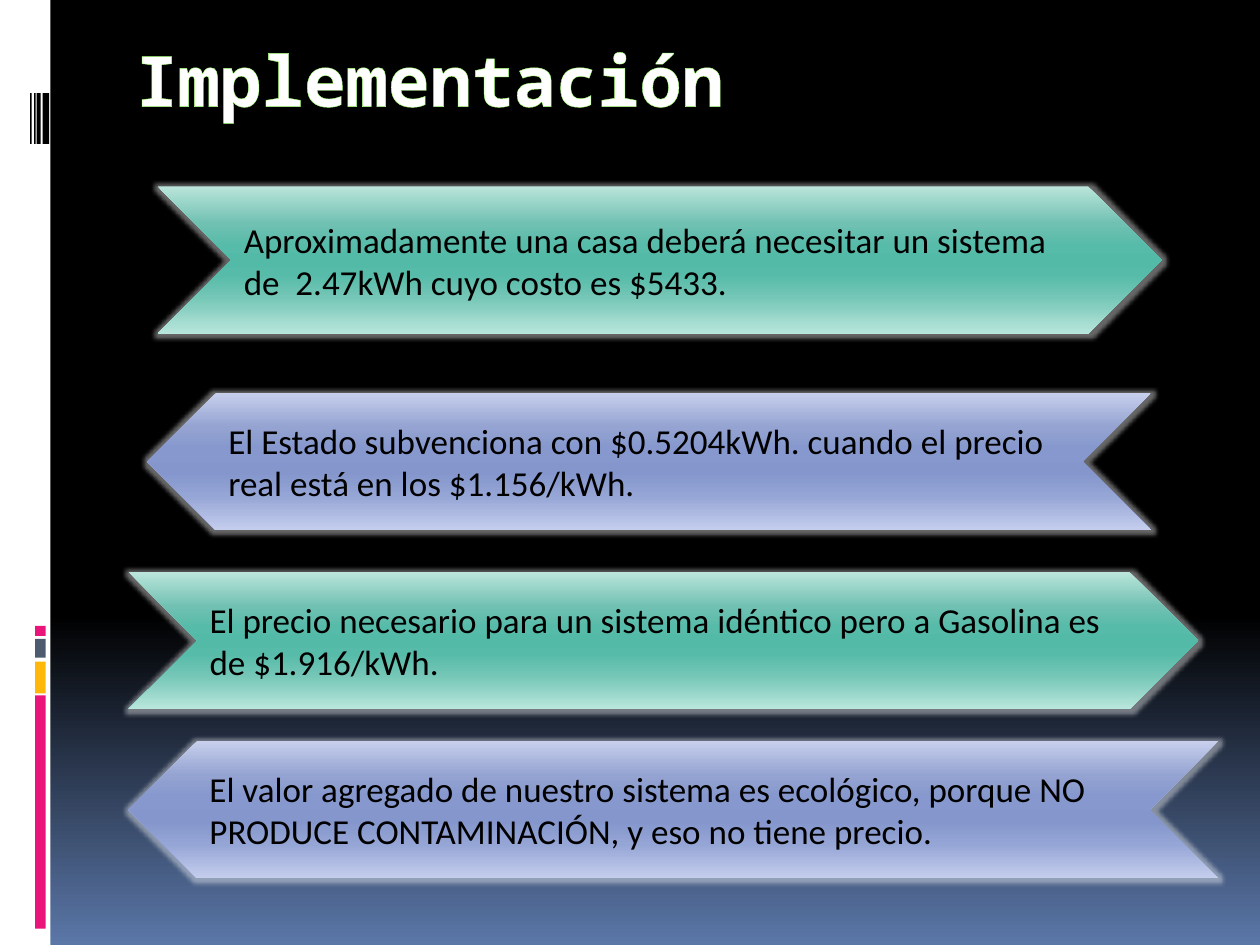
from lxml import etree
from pptx import Presentation
from pptx.dml.color import RGBColor
from pptx.enum.shapes import MSO_SHAPE
from pptx.enum.text import MSO_ANCHOR, PP_ALIGN
from pptx.oxml.ns import qn
from pptx.util import Cm, Pt

RECT, CHEVRON = MSO_SHAPE.RECTANGLE, MSO_SHAPE.CHEVRON
TOP, MIDDLE, LEFT = MSO_ANCHOR.TOP, MSO_ANCHOR.MIDDLE, PP_ALIGN.LEFT

BLACK = RGBColor(0x00, 0x00, 0x00)
WHITE = RGBColor(0xFF, 0xFF, 0xFF)
PINK = RGBColor(0xEA, 0x15, 0x7A)
AMBER = RGBColor(0xFE, 0xB8, 0x0A)
SLATE = RGBColor(0x4E, 0x5B, 0x6F)
LIME = RGBColor(0xA1, 0xFF, 0x70)
NIGHT = [(0, BLACK), (65, BLACK), (100, RGBColor(0x5B, 0x77, 0xA8))]
POSITIONS = (0, 25, 40, 50, 60, 75, 100)
GREEN = [(pos, RGBColor.from_string(c)) for pos, c in zip(
    POSITIONS, "BBE5DB 71C1B2 57BBA9 53BAA8 57BBA9 74C6B6 B9E6DC".split())]
BLUE = [(pos, RGBColor.from_string(c)) for pos, c in zip(
    POSITIONS, "C7CFEC 94A3D1 8698CD 8496CC 8698CD 95A5D5 C5CEED".split())]

BODY_FONT = {"name": "Calibri", "size": Pt(20)}
TITLE_FONT = {"name": "Noto Sans Mono", "size": Pt(40), "bold": True}

BAND_TOP, BAND_HEIGHT = 1.88, 1.02
BAND_BARS = [(0.86, 0.13), (0.74, 0.08), (0.69, 0.03), (0.61, 0.03)]
STRIP_LEFT, STRIP_WIDTH = 0.71, 0.21
STRIP_BARS = [(14.02, 4.7, PINK), (13.34, 0.64, AMBER),
              (12.88, 0.38, SLATE), (12.62, 0.2, PINK)]

ARROWS = [
    ((3.18, 3.76, 20.24, 2.97),
     "Aproximadamente una casa deberá necesitar un sistema de  2.47kWh cuyo costo es $5433."),
    ((2.97, 7.92, 20.24, 2.77),
     "El Estado subvenciona con $0.5204kWh. cuando el precio real está en los $1.156/kWh."),
    ((2.59, 11.53, 21.56, 2.77),
     "El precio necesario para un sistema idéntico pero a Gasolina es de $1.916/kWh."),
    ((2.59, 14.94, 21.97, 2.77),
     "El valor agregado de nuestro sistema es ecológico, porque NO PRODUCE CONTAMINACIÓN, "
     "y eso no tiene precio."),
]


def add_color(parent, color):
    """Append an RGB colour element and return it."""
    return etree.SubElement(parent, qn("a:srgbClr"), val=str(color))


def set_gradient(fill, element, stops):
    """Fill from top to bottom with the given colour stops."""
    fill.gradient()
    fill.gradient_angle = 270
    stop_list = element.find(".//" + qn("a:gsLst"))
    for old in list(stop_list):
        stop_list.remove(old)
    for pos, color in stops:
        add_color(etree.SubElement(stop_list, qn("a:gs"), pos=str(pos * 1000)), color)


def add_shape(s, kind, box):
    """Add a preset shape without line or shadow."""
    sp = s.shapes.add_shape(kind, *map(Cm, box))
    sp.shadow.inherit = False
    sp.line.fill.background()
    return sp


def add_bar(s, box, color):
    """Add a plain coloured rectangle."""
    sp = add_shape(s, RECT, box)
    sp.fill.solid()
    sp.fill.fore_color.rgb = color


def write_text(tf, text, color, anchor, font):
    """Write one left-aligned, formatted paragraph and return its run."""
    tf.word_wrap = True
    tf.vertical_anchor = anchor
    p = tf.paragraphs[0]
    p.alignment = LEFT
    r = p.add_run()
    r.text = text
    for name, value in font.items():
        setattr(r.font, name, value)
    r.font.color.rgb = color
    return r


def add_glow(sp):
    """Give a shape a soft translucent white glow."""
    effects = sp._element.spPr.find(qn("a:effectLst"))
    glow = etree.SubElement(effects, qn("a:glow"), rad=str(Pt(5)))
    etree.SubElement(add_color(glow, WHITE), qn("a:alpha"), val="40000")


def add_arrow(s, box, text, stops, flipped):
    """Add a glowing chevron with text, optionally pointing left."""
    sp = add_shape(s, CHEVRON, box)
    set_gradient(sp.fill, sp._element, stops)
    add_glow(sp)
    if flipped:
        sp._element.spPr.find(qn("a:xfrm")).set("flipH", "1")
    write_text(sp.text_frame, text, BLACK, MIDDLE, BODY_FONT)


def add_title(s, text):
    """Add the outlined slide title."""
    sp = s.shapes.add_textbox(Cm(2.49), Cm(0.74), Cm(21.59), Cm(2.54))
    sp.text_frame.margin_top = 0
    r = write_text(sp.text_frame, text, WHITE, TOP, TITLE_FONT)
    outline = etree.Element(qn("a:ln"), w=str(Pt(2.48)))
    add_color(etree.SubElement(outline, qn("a:solidFill")), LIME)
    r.font._element.insert(0, outline)


def main():
    """Build and save the slide."""
    prs = Presentation()
    prs.slide_width, prs.slide_height = Cm(25.4), Cm(19.05)
    s = prs.slides.add_slide(prs.slide_layouts[6])
    set_gradient(s.background.fill, s._element, NIGHT)
    add_bar(s, (0, 0, 1.02, 19.05), WHITE)
    for top, height, color in STRIP_BARS:
        add_bar(s, (STRIP_LEFT, top, STRIP_WIDTH, height), color)
    for left, width in BAND_BARS:
        add_bar(s, (left, BAND_TOP, width, BAND_HEIGHT), BLACK)
    add_title(s, "Implementación")
    for i, (box, text) in enumerate(ARROWS):
        flipped = i % 2 == 1
        add_arrow(s, box, text, BLUE if flipped else GREEN, flipped)
    prs.save("out.pptx")


if __name__ == "__main__":
    main()
